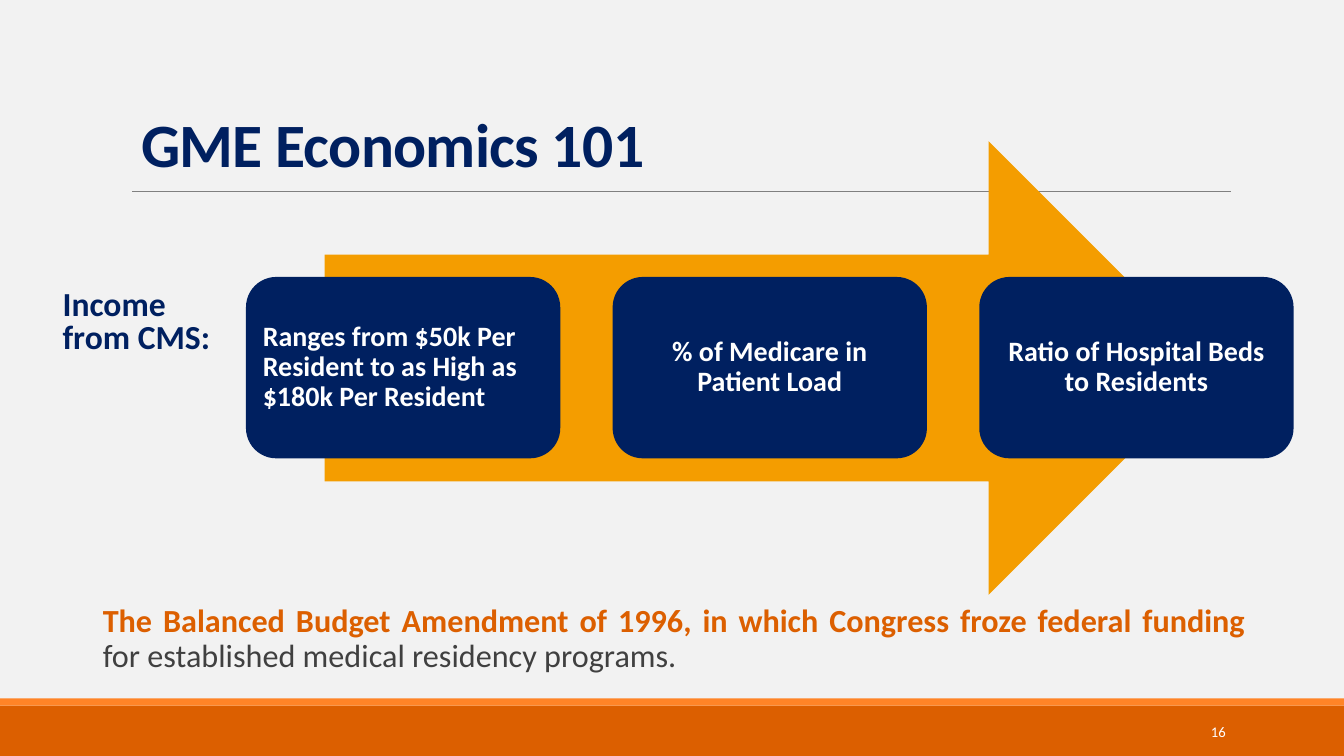
from lxml.etree import SubElement
from pptx import Presentation
from pptx.dml.color import RGBColor
from pptx.enum.shapes import MSO_CONNECTOR as Line, MSO_SHAPE as Shape
from pptx.enum.text import MSO_ANCHOR as Anchor, MSO_AUTO_SIZE as Fit, PP_ALIGN as Align
from pptx.oxml.ns import qn
from pptx.util import Cm, Pt

WIDE, HIGH = 33.87, 19.05
COLORS = {
    "back": "F2F2F2", "navy": "002060", "gold": "F49D00", "rust": "DC5F00",
    "peach": "FF8427", "rule": "808080", "text": "404040", "white": "FFFFFF",
}
FACTS = [
    ("Ranges from $50k Per Resident to as High as $180k Per Resident", Align.LEFT),
    ("% of Medicare in Patient Load", Align.CENTER),
    ("Ratio of Hospital Beds to Residents", Align.CENTER),
]


def color(name):
    return RGBColor.from_string(COLORS[name])


def style(run, size, tone, bold=True):
    font = run.font
    font.name, font.size, font.bold = "Calibri", Pt(size), bold
    font.color.rgb = color(tone)


def write(frame, text, size, tone, align=Align.LEFT, bold=True, space=None):
    """Fill a text frame with one styled paragraph and return it."""
    frame.text = text
    frame.word_wrap = True
    frame.auto_size = Fit.NONE
    para = frame.paragraphs[0]
    para.alignment = align
    if space:
        para.line_spacing = space
    style(para.runs[0], size, tone, bold)
    return para


def place(item, left, top, width, height):
    item.left, item.top = Cm(left), Cm(top)
    item.width, item.height = Cm(width), Cm(height)


def add_block(slide, kind, box, tone):
    block = slide.shapes.add_shape(kind, *map(Cm, box))
    block.shadow.inherit = False
    block.fill.solid()
    block.fill.fore_color.rgb = color(tone)
    block.line.fill.background()
    return block


def add_rule(slide, left, right, top):
    rule = slide.shapes.add_connector(
        Line.STRAIGHT, Cm(left), Cm(top), Cm(right), Cm(top))
    rule.line.color.rgb = color("rule")
    rule.line.width = Pt(0.5)
    SubElement(rule._element.spPr, qn("a:effectLst"))


def add_label(slide, box, *args, **extra):
    frame = slide.shapes.add_textbox(*map(Cm, box)).text_frame
    return frame, write(frame, *args, **extra)


def add_fact(slide, left, text, align):
    card = add_block(slide, Shape.ROUNDED_RECTANGLE, (left, 6.98, 7.92, 4.57), "navy")
    frame = card.text_frame
    write(frame, text, 20, "white", align, space=0.9)
    frame.vertical_anchor = Anchor.MIDDLE
    frame.margin_left = frame.margin_right = Cm(0.2)
    frame.margin_top = frame.margin_bottom = Cm(0.2)


def set_title(title):
    place(title, 3.3, 1.7, 23.37, 2.97)
    para = write(title.text_frame, "GME Economics 101", 44, "navy", space=0.85)
    title.text_frame.vertical_anchor = Anchor.BOTTOM
    para.runs[0]._r.get_or_add_rPr().set("spc", "-50")


def set_body(body):
    place(body, 2.59, 15.11, 28.85, 2.18)
    frame = body.text_frame
    para = write(
        frame,
        "The Balanced Budget Amendment of 1996, in which Congress froze federal funding ",
        23, "rust", Align.JUSTIFY, space=0.9)
    rest = para.add_run()
    rest.text = "for established medical residency programs."
    style(rest, 23, "text", False)
    frame.margin_left = frame.margin_right = 0
    para.space_before, para.space_after = Pt(12), Pt(2)
    props = para._p.get_or_add_pPr()
    props.set("marL", "0")
    props.set("indent", "0")
    SubElement(props, qn("a:buNone"))


def main():
    deck = Presentation()
    deck.slide_width, deck.slide_height = Cm(WIDE), Cm(HIGH)
    slide = deck.slides.add_slide(deck.slide_layouts[1])
    slide.background.fill.solid()
    slide.background.fill.fore_color.rgb = color("back")

    # Footer bands and title rule
    add_block(slide, Shape.RECTANGLE, (0, 17.78, WIDE, 1.27), "rust")
    add_block(slide, Shape.RECTANGLE, (0, 17.6, WIDE, 0.18), "peach")
    add_rule(slide, 3.33, 31.01, 4.83)

    # Income label
    frame, para = add_label(slide, (0.56, 7.21, 5.08, 1.93), "Income from CMS:",
                            24, "navy", Align.JUSTIFY, space=0.8)
    frame.margin_left = Cm(1.02)
    para.space_before = para.space_after = Pt(6)

    # Arrow with the three facts
    add_block(slide, Shape.RIGHT_ARROW, (8.18, 3.56, 22.45, 11.43), "gold")
    for i, (text, align) in enumerate(FACTS):
        add_fact(slide, 6.2 + 9.24 * i, text, align)

    # Title, closing statement and page number
    set_title(slide.shapes.title)
    set_body(slide.placeholders[1])
    frame, para = add_label(slide, (27.51, 17.93, 3.63, 1.02), "16",
                            10.5, "white", Align.RIGHT, bold=False)
    frame.vertical_anchor = Anchor.MIDDLE

    deck.save("out.pptx")


if __name__ == "__main__":
    main()
